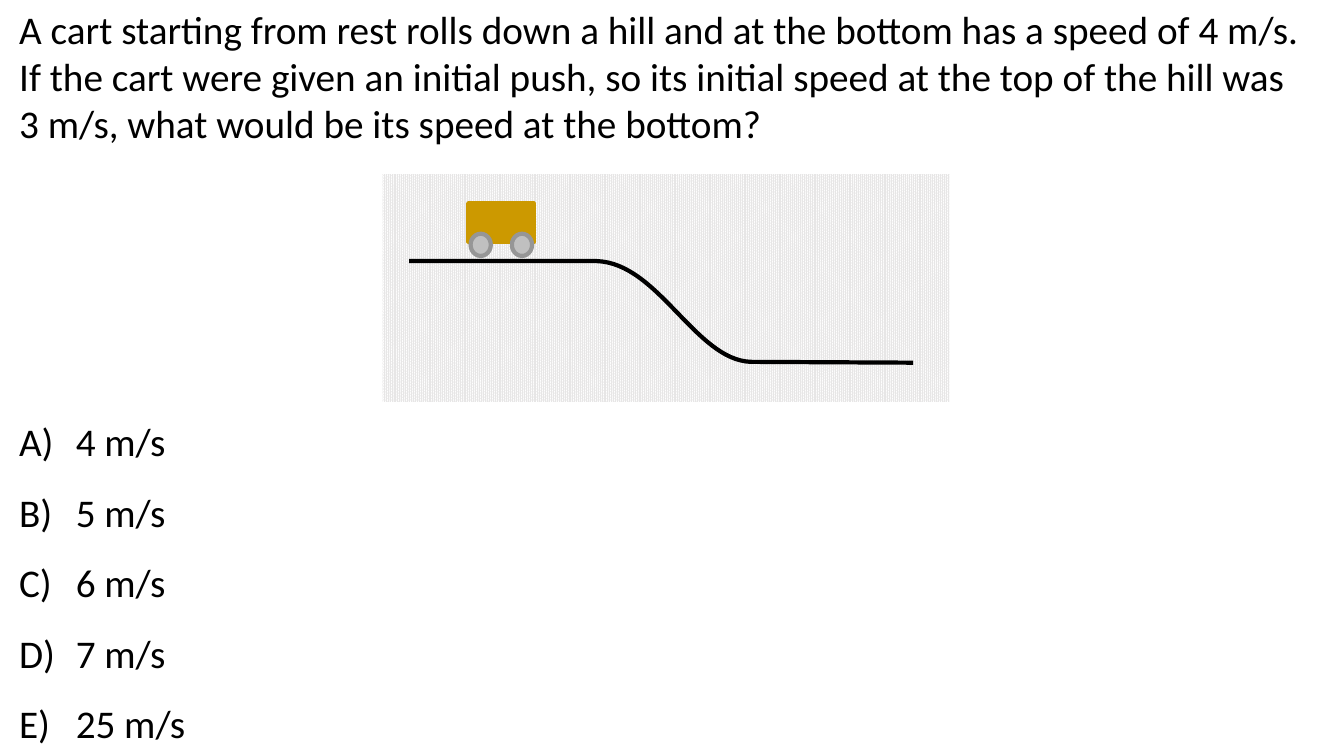
from dataclasses import dataclass

from lxml.etree import SubElement
from pptx import Presentation
from pptx.dml.color import RGBColor
from pptx.enum.dml import MSO_PATTERN
from pptx.enum.shapes import MSO_SHAPE
from pptx.enum.text import MSO_ANCHOR, MSO_AUTO_SIZE, PP_ALIGN
from pptx.oxml import parse_xml
from pptx.oxml.ns import nsdecls, qn
from pptx.util import Cm, Pt


@dataclass(frozen=True)
class Theme:
    font: str = "Calibri"
    text_size: int = 28
    line_width: int = 3
    text: str = "000000"
    track: str = "000000"
    cart: str = "CC9900"
    wheel: str = "C0C0C0"
    rim: str = "969696"
    panel_front: str = "E7E6E6"
    panel_back: str = "FFFFFF"


THEME = Theme()

QUESTION = (
    "A cart starting from rest rolls down a hill and at the bottom has a speed of 4 m/s. "
    "If the cart were given an initial push, so its initial speed at the top of the hill "
    "was 3 m/s, what would be its speed at the bottom?"
)
ANSWERS = ["4 m/s", "5 m/s", "6 m/s", "7 m/s", "25 m/s"]
TRACK = [
    (10.31, 6.58), (15.04, 6.58), (16.59, 6.63),
    (17.53, 9.07), (18.92, 9.12), (23.01, 9.14),
]
WHEEL_LEFTS = [11.86, 12.9]


def color(value):
    return RGBColor.from_string(value)


def format_text(paragraph):
    for span in paragraph.runs:
        span.font.name = THEME.font
        span.font.size = Pt(THEME.text_size)
        span.font.color.rgb = color(THEME.text)


def set_outline(shape, line_color):
    shape.line.color.rgb = color(line_color)
    shape.line.width = Pt(THEME.line_width)


def write_question(page):
    title = page.shapes.title
    title.left, title.top, title.width, title.height = Cm(0.23), Cm(0), Cm(33.07), Cm(3.84)
    frame = title.text_frame
    frame.text = QUESTION
    frame.word_wrap = True
    frame.auto_size = MSO_AUTO_SIZE.NONE
    frame.vertical_anchor = MSO_ANCHOR.TOP
    para = frame.paragraphs[0]
    para.alignment = PP_ALIGN.LEFT
    para.line_spacing = 1.0
    format_text(para)


def add_letter(para):
    properties = para._p.get_or_add_pPr()
    properties.set("marL", str(Cm(1.43)))
    properties.set("indent", str(Cm(-1.43)))
    SubElement(properties, qn("a:buFont"), typeface="+mj-lt")
    SubElement(properties, qn("a:buAutoNum"), type="alphaUcParenR")


def write_answers(page):
    box = page.shapes.add_textbox(Cm(0.23), Cm(9.8), Cm(4.75), Cm(9.25))
    frame = box.text_frame
    frame.word_wrap = False
    frame.text = "\n".join(ANSWERS)
    for para in frame.paragraphs:
        para.line_spacing = 1.5
        add_letter(para)
        format_text(para)


def add_part(group, preset, left, top, width, height):
    part = group.shapes.add_shape(preset, Cm(left), Cm(top), Cm(width), Cm(height))
    part.shadow.inherit = False
    return part


def add_solid(group, preset, bounds, fill_color, line_color):
    part = add_part(group, preset, *bounds)
    part.fill.solid()
    part.fill.fore_color.rgb = color(fill_color)
    set_outline(part, line_color)


def add_panel(group):
    panel = add_part(group, MSO_SHAPE.RECTANGLE, 9.63, 4.39, 14.3, 5.74)
    panel.fill.patterned()
    panel.fill.pattern = MSO_PATTERN.PERCENT_90
    panel.fill.fore_color.rgb = color(THEME.panel_front)
    panel.fill.back_color.rgb = color(THEME.panel_back)
    panel.line.fill.background()


def add_track(group):
    start, *rest = [(Cm(x), Cm(y)) for x, y in TRACK]
    builder = group.shapes.build_freeform(*start)
    builder.add_line_segments(rest, close=False)
    track = builder.convert_to_shape()
    track.shadow.inherit = False
    track.fill.background()
    set_outline(track, THEME.track)
    slope = track._element.xpath(".//a:lnTo")[1:4]
    curve = parse_xml(f"<a:cubicBezTo {nsdecls('a')}/>")
    slope[0].addprevious(curve)
    for segment in slope:
        curve.append(segment[0])
        segment.getparent().remove(segment)


def add_cart(group):
    add_solid(group, MSO_SHAPE.RECTANGLE, (11.81, 5.13, 1.65, 0.97), THEME.cart, THEME.cart)
    for left in WHEEL_LEFTS:
        add_solid(group, MSO_SHAPE.OVAL, (left, 5.89, 0.51, 0.56), THEME.wheel, THEME.rim)


def main():
    deck = Presentation()
    deck.slide_width, deck.slide_height = Cm(33.87), Cm(19.05)
    page = deck.slides.add_slide(deck.slide_layouts.get_by_name("Title Only"))
    write_question(page)
    diagram = page.shapes.add_group_shape()
    add_panel(diagram)
    add_track(diagram)
    add_cart(diagram)
    write_answers(page)
    deck.save("out.pptx")


if __name__ == "__main__":
    main()
